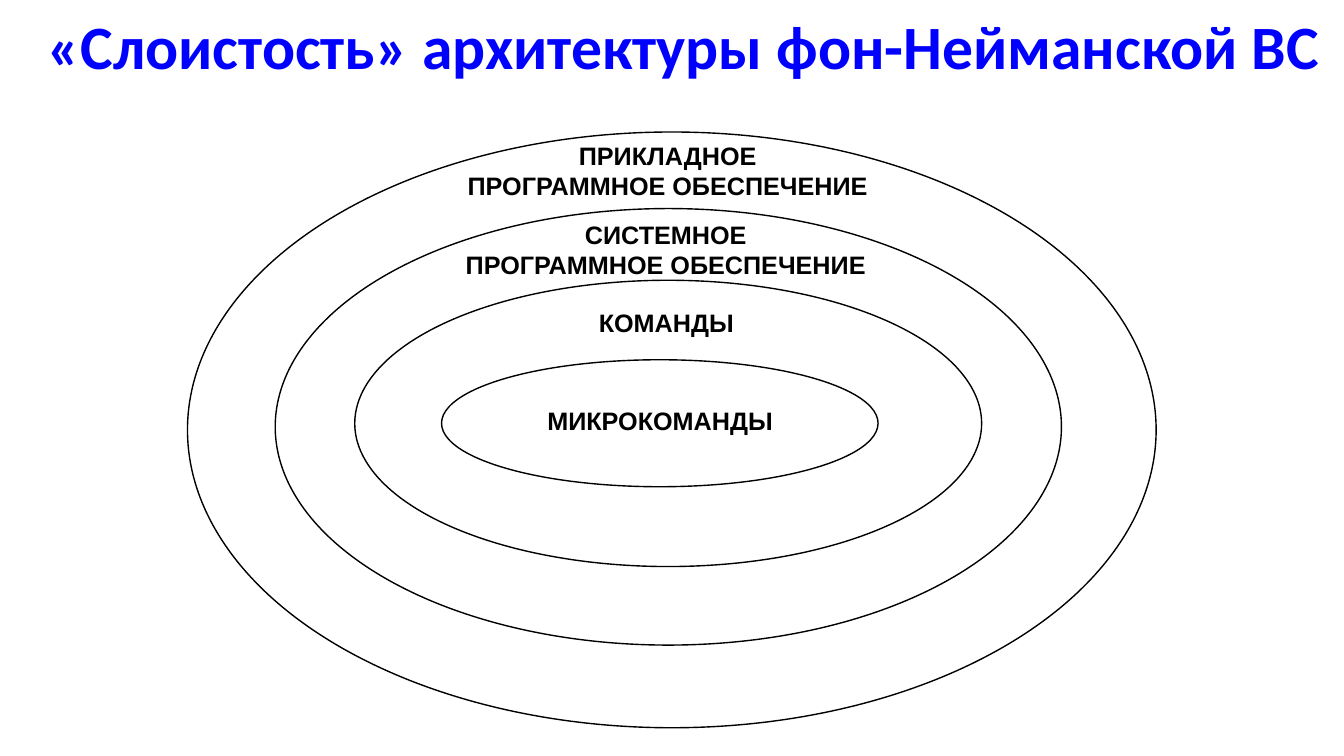
from pptx import Presentation
from pptx import util as u
from pptx.dml.color import RGBColor
from pptx.enum import shapes, text

COLORS = {"title": "0000FF", "ink": "000000"}


def rgb(name):
    return RGBColor.from_string(COLORS[name])


def write(tf, lines, *, size, font, color, bold=True, spacing=None):
    """Fill a text frame with one centred paragraph per line."""
    for i, line in enumerate(lines):
        p = tf.paragraphs[0] if i == 0 else tf.add_paragraph()
        p.alignment = text.PP_ALIGN.CENTER
        if spacing:
            p.line_spacing = spacing
        r = p.add_run()
        r.text = line
        r.font.size, r.font.name, r.font.bold = u.Pt(size), font, bold
        r.font.color.rgb = rgb(color)


class Deck:
    """Holds the style and the current slide."""
    title_style = dict(size=44, font="Calibri", color="title", spacing=0.9)
    label_style = dict(size=18, font="Arial", color="ink")
    line_width = 1

    def __init__(self, width, height):
        self.prs = Presentation()
        self.prs.slide_width, self.prs.slide_height = u.Pt(width), u.Pt(height)
        self.s = self.prs.slides.add_slide(self.prs.slide_layouts[5])

    def title(self, line, box):
        sp = self.s.shapes.title
        sp.left, sp.top, sp.width, sp.height = map(u.Pt, box)
        tf = sp.text_frame
        tf.word_wrap = True
        tf.auto_size = text.MSO_AUTO_SIZE.NONE
        tf.vertical_anchor = text.MSO_ANCHOR.MIDDLE
        write(tf, [line], **self.title_style)

    def ellipse(self, box):
        sp = self.s.shapes.add_shape(shapes.MSO_SHAPE.OVAL, *map(u.Pt, box))
        sp.shadow.inherit = False
        sp.fill.background()
        sp.line.color.rgb = rgb("ink")
        sp.line.width = u.Pt(self.line_width)

    def label(self, lines, box):
        tf = self.s.shapes.add_textbox(*map(u.Pt, box)).text_frame
        tf.word_wrap = False
        tf.auto_size = text.MSO_AUTO_SIZE.SHAPE_TO_FIT_TEXT
        write(tf, lines, **self.label_style)


# Layers from the outside in: ellipse box, label lines, label box
LAYERS = [
    ((133.9, 94.3, 691.9, 425.5), ["ПРИКЛАДНОЕ", "ПРОГРАММНОЕ ОБЕСПЕЧЕНИЕ"],
     (325.4, 96.5, 303.1, 51)),
    ((196.6, 149, 561.6, 311.8), ["СИСТЕМНОЕ", "ПРОГРАММНОЕ ОБЕСПЕЧЕНИЕ"],
     (324, 152.9, 303.1, 51)),
    ((253.4, 200.2, 447.8, 204.5), ["КОМАНДЫ"], (419.8, 216, 112.3, 29)),
    ((315.4, 257, 311.8, 90.7), ["МИКРОКОМАНДЫ"], (383, 285.9, 177.1, 29)),
]


def main():
    deck = Deck(960, 540)

    # Title
    deck.title("«Слоистость» архитектуры фон-Нейманской ВС", (17.3, 5.8, 943.2, 59))

    # Nested ellipses, then the labels above them
    for ellipse_box, _, _ in LAYERS:
        deck.ellipse(ellipse_box)
    for _, lines, label_box in LAYERS:
        deck.label(lines, label_box)

    deck.prs.save("out.pptx")


if __name__ == "__main__":
    main()
